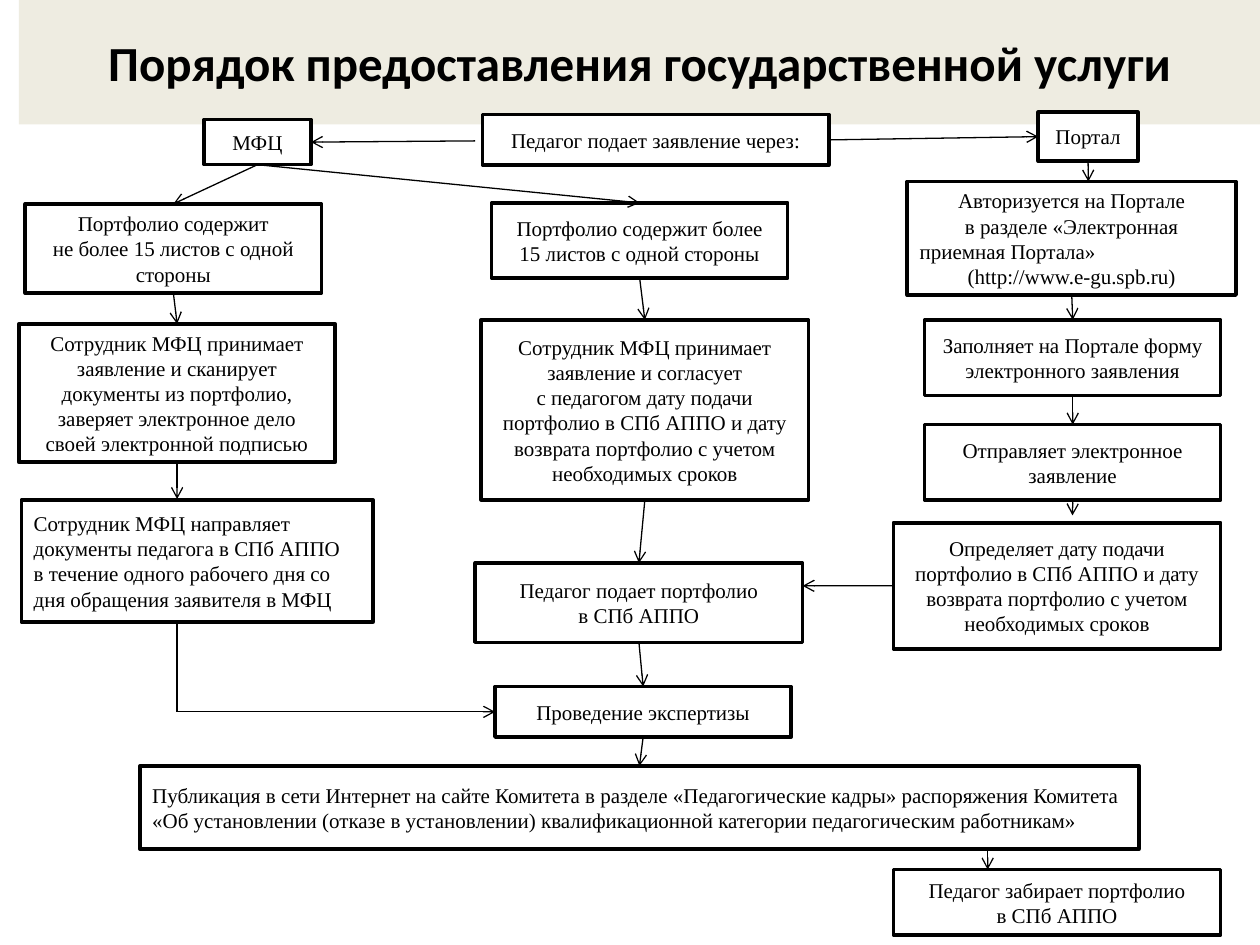
from dataclasses import dataclass
from typing import NamedTuple, Optional, Union

from lxml.etree import SubElement
from pptx import Presentation
from pptx.dml.color import RGBColor
from pptx.enum.shapes import MSO_CONNECTOR, MSO_SHAPE
from pptx.enum.text import MSO_ANCHOR, PP_ALIGN
from pptx.oxml.ns import qn
from pptx.util import Cm, Pt

LEFT, CENTER = PP_ALIGN.LEFT, PP_ALIGN.CENTER
TOP_SIDE, LEFT_SIDE, BOTTOM_SIDE, RIGHT_SIDE = range(4)


@dataclass(frozen=True)
class Theme:
    ink: RGBColor = RGBColor(0x00, 0x00, 0x00)
    paper: RGBColor = RGBColor(0xFF, 0xFF, 0xFF)
    banner: RGBColor = RGBColor(0xEE, 0xEC, 0xE1)
    title_font: str = "Calibri"
    body_font: str = "Times New Roman"
    title_size: Pt = Pt(28)
    body_size: Pt = Pt(12)
    border: Pt = Pt(2)
    arrow: Pt = Pt(0.75)


THEME = Theme()
TITLE_FORMAT = {"name": THEME.title_font, "size": THEME.title_size, "bold": True}
BODY_FORMAT = {"name": THEME.body_font, "size": THEME.body_size, "bold": False}
FRAME_FORMAT = {"word_wrap": True, "vertical_anchor": MSO_ANCHOR.MIDDLE}


class Line(NamedTuple):
    text: str
    alignment: PP_ALIGN = CENTER


@dataclass(frozen=True)
class Box:
    left: float
    top: float
    width: float
    height: float
    lines: tuple[Line, ...]


class Side(NamedTuple):
    box: str
    index: int


class Point(NamedTuple):
    x: float
    y: float


@dataclass(frozen=True)
class Link:
    start: Union[Side, Point]
    end: Union[Side, Point]
    arrowhead: bool = True


TITLE = Box(0.38, 0, 25.02, 2.51, (Line("Порядок предоставления государственной услуги"),))

BOXES = {
    "application": Box(9.73, 2.31, 6.98, 1.02, (Line("Педагог подает заявление через:"),)),
    "center": Box(4.11, 2.41, 2.16, 0.91, (Line("МФЦ"),)),
    "portal": Box(20.93, 2.26, 2.01, 0.99, (Line("Портал"),)),
    "short_portfolio": Box(0.51, 4.11, 5.97, 1.8, (
        Line("Портфолио содержит"), Line("не более 15 листов с одной стороны"))),
    "long_portfolio": Box(9.91, 4.09, 5.97, 1.52, (
        Line("Портфолио содержит более 15 листов с одной стороны"),)),
    "scan": Box(0.38, 6.53, 6.38, 2.79, (
        Line("Сотрудник МФЦ принимает заявление и сканирует документы из портфолио, "
             "заверяет электронное дело своей электронной подписью"),)),
    "agree_date": Box(9.7, 6.45, 6.6, 3.63, (
        Line("Сотрудник МФЦ принимает заявление и согласует"),
        Line("с педагогом дату подачи портфолио в СПб АППО и дату "
             "возврата портфолио с учетом необходимых сроков"))),
    "forward": Box(0.43, 10.08, 7.09, 2.46, (
        Line("Сотрудник МФЦ направляет документы педагога в СПб АППО", LEFT),
        Line("в течение одного рабочего дня со дня обращения заявителя в МФЦ", LEFT))),
    "publication": Box(2.82, 15.44, 20.14, 1.68, (
        Line("Публикация в сети Интернет на сайте Комитета в разделе «Педагогические кадры» "
             "распоряжения Комитета «Об установлении (отказе в установлении) "
             "квалификационной категории педагогическим работникам»", LEFT),)),
    "submission": Box(9.58, 11.35, 6.6, 1.6, (
        Line("Педагог подает портфолио"), Line("в СПб АППО"))),
    "review": Box(9.98, 13.84, 5.97, 1.02, (Line("Проведение экспертизы"),)),
    "authorization": Box(18.29, 3.66, 6.63, 2.29, (
        Line("Авторизуется на Портале"), Line("в разделе «Электронная"),
        Line("приемная Портала»", LEFT), Line("(http://www.e-gu.spb.ru)"))),
    "form": Box(18.64, 6.45, 5.97, 1.52, (
        Line("Заполняет на Портале форму электронного заявления"),)),
    "choose_date": Box(18.01, 10.54, 6.6, 2.54, (
        Line("Определяет дату подачи портфолио в СПб АППО и дату "
             "возврата портфолио с учетом необходимых сроков"),)),
    "sending": Box(18.64, 8.56, 5.97, 1.52, (Line("Отправляет электронное заявление"),)),
    "return": Box(18.01, 17.53, 6.6, 1.32, (
        Line("Педагог забирает портфолио"), Line("в СПб АППО"))),
}

DOWNWARD = (
    ("center", "short_portfolio"), ("center", "long_portfolio"),
    ("short_portfolio", "scan"), ("long_portfolio", "agree_date"),
    ("agree_date", "submission"), ("submission", "review"), ("review", "publication"),
    ("authorization", "form"), ("form", "sending"),
)

CORNER = Point(3.57, 14.35)
LINKS = tuple(Link(Side(a, BOTTOM_SIDE), Side(b, TOP_SIDE)) for a, b in DOWNWARD) + (
    Link(Point(9.58, 2.84), Side("center", RIGHT_SIDE)),
    Link(Side("application", RIGHT_SIDE), Side("portal", LEFT_SIDE)),
    Link(Side("scan", BOTTOM_SIDE), Point(3.57, 10.06)),
    Link(Point(3.57, 12.54), CORNER, arrowhead=False),
    Link(CORNER, Side("review", LEFT_SIDE)),
    Link(Side("portal", BOTTOM_SIDE), Point(21.94, 3.66)),
    Link(Side("sending", BOTTOM_SIDE), Point(21.62, 10.39)),
    Link(Side("choose_date", LEFT_SIDE), Point(16.18, 11.81)),
    Link(Point(19.91, 17.12), Point(19.91, 17.53)),
)


def apply_format(target: object, values: dict) -> None:
    for name, value in values.items():
        setattr(target, name, value)


def draw_box(slide, box: Box, fill: RGBColor, font_format: dict, border: Optional[Pt] = None):
    shape = slide.shapes.add_shape(
        MSO_SHAPE.RECTANGLE, Cm(box.left), Cm(box.top), Cm(box.width), Cm(box.height))
    shape.shadow.inherit = False
    shape.fill.solid()
    shape.fill.fore_color.rgb = fill
    if border is None:
        shape.line.fill.background()
    else:
        shape.line.color.rgb = THEME.ink
        shape.line.width = border
    frame = shape.text_frame
    apply_format(frame, FRAME_FORMAT)
    for index, line in enumerate(box.lines):
        paragraph = frame.add_paragraph() if index else frame.paragraphs[0]
        paragraph.alignment = line.alignment
        run = paragraph.add_run()
        run.text = line.text
        apply_format(run.font, font_format)
        run.font.color.rgb = THEME.ink
    return shape


def locate(end: Union[Side, Point]) -> Point:
    if isinstance(end, Point):
        return end
    box = BOXES[end.box]
    across, down = ((0.5, 0), (0, 0.5), (0.5, 1), (1, 0.5))[end.index]
    return Point(box.left + box.width * across, box.top + box.height * down)


def draw_link(slide, link: Link, shapes: dict) -> None:
    start, end = locate(link.start), locate(link.end)
    connector = slide.shapes.add_connector(
        MSO_CONNECTOR.STRAIGHT, Cm(start.x), Cm(start.y), Cm(end.x), Cm(end.y))
    for side, connect in ((link.start, connector.begin_connect),
                          (link.end, connector.end_connect)):
        if isinstance(side, Side):
            connect(shapes[side.box], side.index)
    connector.line.color.rgb = THEME.ink
    connector.line.width = THEME.arrow
    if link.arrowhead:
        SubElement(connector.line._get_or_add_ln(), qn("a:tailEnd"), type="arrow")
    SubElement(connector._element.spPr, qn("a:effectLst"))


def main() -> None:
    presentation = Presentation()
    presentation.slide_width, presentation.slide_height = Cm(25.4), Cm(19.05)
    slide = presentation.slides.add_slide(presentation.slide_layouts[6])
    draw_box(slide, TITLE, THEME.banner, TITLE_FORMAT)
    shapes = {name: draw_box(slide, box, THEME.paper, BODY_FORMAT, THEME.border)
              for name, box in BOXES.items()}
    for link in LINKS:
        draw_link(slide, link, shapes)
    presentation.save("out.pptx")


if __name__ == "__main__":
    main()
